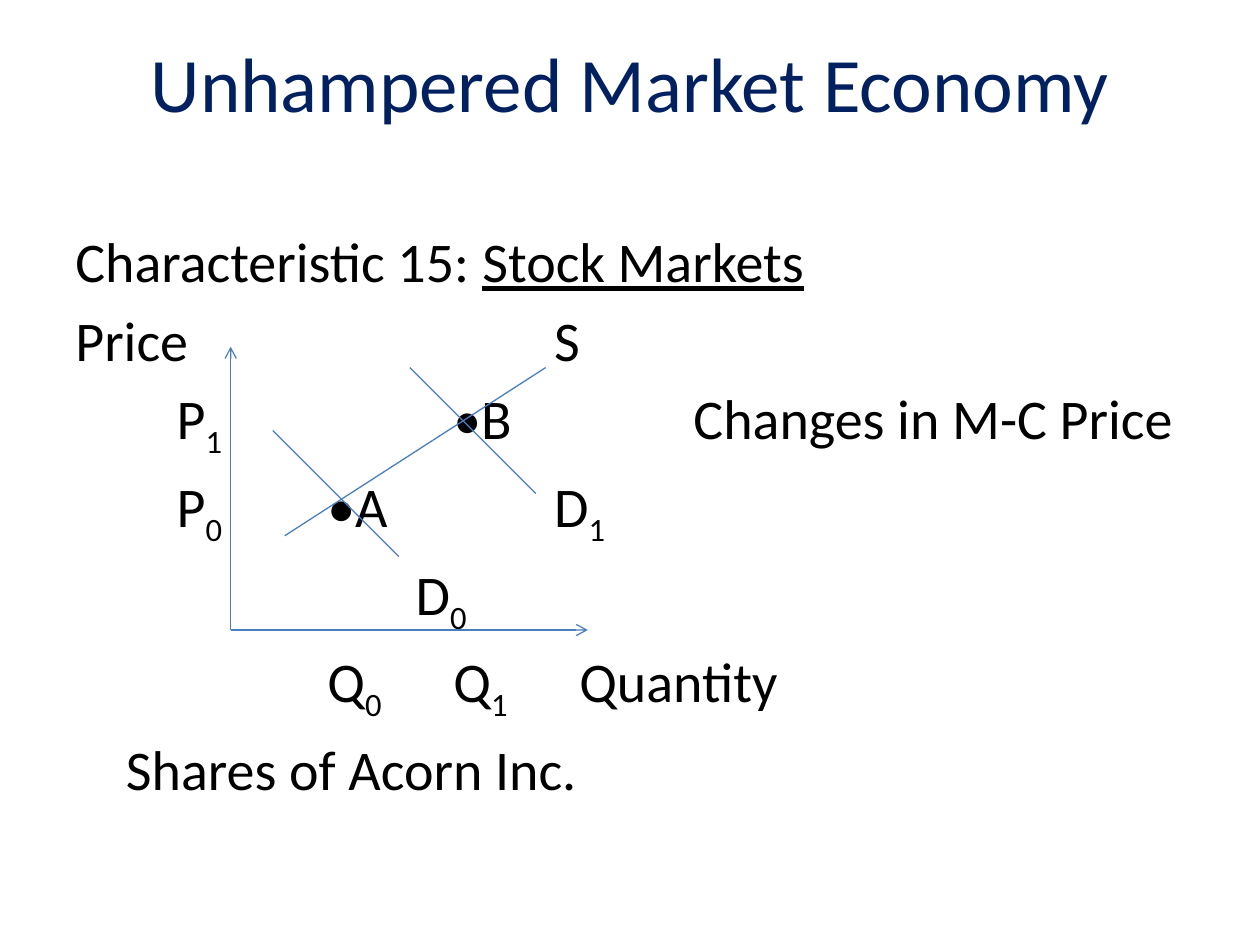
from lxml.etree import SubElement
from pptx import Presentation
from pptx.dml.color import RGBColor
from pptx.enum.shapes import MSO_CONNECTOR
from pptx.enum.text import MSO_ANCHOR, PP_ALIGN
from pptx.oxml.ns import qn
from pptx.util import Cm, Pt

COLORS = {"title": "002060", "text": "000000", "line": "4B7EBC"}

# Each row: text with its marked parts between bars, and tab stops in cm.
ROWS = [
    ("Characteristic 15: |Stock Markets", []),
    ("Price\tS", [9.65]),
    ("\tP|1|\t•B\tChanges in M-C Price", [2.04, 7.62, 12.46]),
    ("\tP|0|\t•A\tD|1", [2.04, 5.08, 9.65]),
    ("\tD|0", [6.86]),
    ("\tQ|0|\tQ|1|\tQuantity", [5.08, 7.62, 10.16]),
    ("\tShares of Acorn Inc.", [1.02]),
]


class SlideBuilder:
    font_name = "Calibri"

    def __init__(self, page):
        self.page = page

    def style(self, font, size, color):
        font.name = self.font_name
        font.size = Pt(size)
        font.color.rgb = RGBColor.from_string(COLORS[color])

    def title(self, text, left, top, width, height):
        box = self.page.shapes.title
        box.left, box.top, box.width, box.height = map(Cm, (left, top, width, height))
        frame = box.text_frame
        frame.vertical_anchor = MSO_ANCHOR.MIDDLE
        para = frame.paragraphs[0]
        para.text = text
        para.alignment = PP_ALIGN.CENTER
        self.style(para.font, 44, "title")

    def text_rows(self, rows, left, top, width, height):
        box = self.page.shapes.add_textbox(*map(Cm, (left, top, width, height)))
        frame = box.text_frame
        frame.word_wrap = True
        for index, (text, stops) in enumerate(rows):
            para = frame.add_paragraph() if index else frame.paragraphs[0]
            para.space_before = Pt(6.4)
            if stops:
                self.tab_stops(para, stops)
            self.style(para.font, 32, "text")
            self.spans(para, text, underline=index == 0)

    def tab_stops(self, para, stops):
        tabs = SubElement(para._p.get_or_add_pPr(), qn("a:tabLst"))
        for stop in stops:
            SubElement(tabs, qn("a:tab"), pos=str(Cm(stop)), algn="l")

    def spans(self, para, text, underline):
        """Underline the parts between bars, or else set them as subscripts."""
        for index, part in enumerate(text.split("|")):
            span = para.add_run()
            span.text = part
            if index % 2 and underline:
                span.font.underline = True
            elif index % 2:
                span._r.get_or_add_rPr().set("baseline", "-25000")

    def line(self, start, end, arrow=False):
        line = self.page.shapes.add_connector(
            MSO_CONNECTOR.STRAIGHT, *map(Cm, (*start, *end)))
        line.line.color.rgb = RGBColor.from_string(COLORS["line"])
        line.line.width = Pt(0.75)
        if arrow:
            SubElement(line.line._get_or_add_ln(), qn("a:tailEnd"), type="arrow")
        SubElement(line._element.spPr, qn("a:effectLst"))


def main():
    deck = Presentation()
    deck.slide_width, deck.slide_height = Cm(25.4), Cm(19.05)
    builder = SlideBuilder(deck.slides.add_slide(deck.slide_layouts[5]))
    builder.title("Unhampered Market Economy", 0, 0.05, 25.4, 3.18)
    builder.text_rows(ROWS, 1.27, 4.45, 22.86, 12.57)

    axis_origin = (4.65, 12.7)
    for axis_end in [(4.65, 6.99), (11.85, 12.7)]:
        builder.line(axis_origin, axis_end, arrow=True)

    demand_length = 2.54
    for x, y in [(5.5, 8.68), (8.26, 7.41)]:
        builder.line((x, y), (x + demand_length, y + demand_length))
    supply_start, supply_end = (5.74, 10.8), (11, 7.41)
    builder.line(supply_start, supply_end)

    deck.save("out.pptx")


if __name__ == "__main__":
    main()
